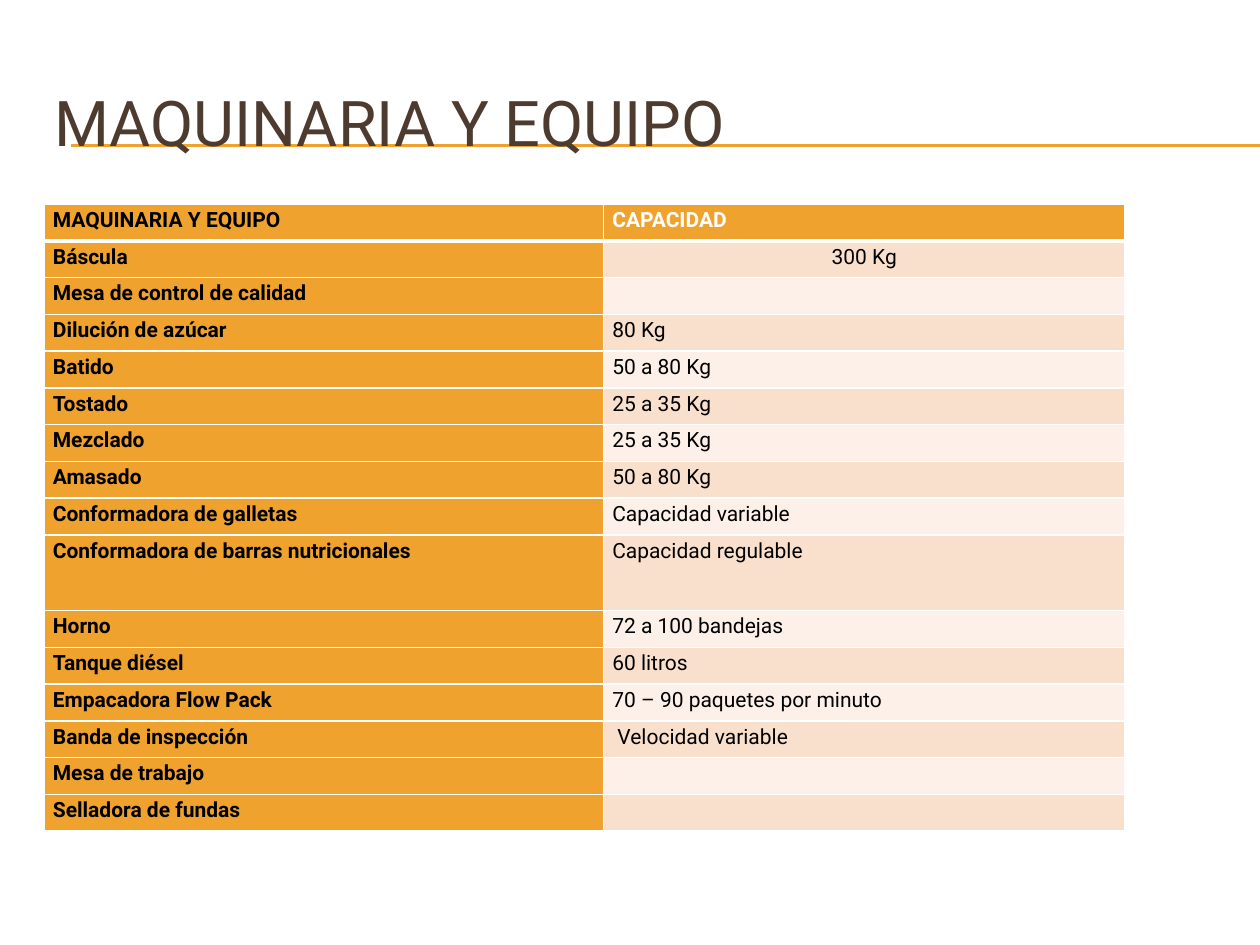
from dataclasses import dataclass

from lxml.etree import SubElement
from pptx import Presentation
from pptx.dml.color import RGBColor
from pptx.enum.shapes import MSO_CONNECTOR
from pptx.enum.text import MSO_ANCHOR, MSO_AUTO_SIZE, PP_ALIGN
from pptx.oxml import parse_xml
from pptx.oxml.ns import nsdecls, qn
from pptx.util import Inches, Pt


@dataclass(frozen=True)
class Theme:
    font: str = "Roboto"
    accent: str = "F0A22E"
    title: str = "4E3B30"
    text: str = "000000"
    white: str = "FFFFFF"
    bands: tuple = ("F9E0CD", "FCF0E8")
    title_size: int = 36
    table_size: int = 12
    rule_width: float = 0.75


@dataclass(frozen=True)
class Box:
    left: float
    top: float
    width: float
    height: float

    def lengths(self):
        return [Inches(n) for n in (self.left, self.top, self.width, self.height)]


THEME = Theme()
PAGE_WIDTH, PAGE_HEIGHT = 10, 7.5
HEADING = "MAQUINARIA Y EQUIPO"
ROWS = [
    (HEADING, "CAPACIDAD"),
    ("Báscula", "300 Kg"),
    ("Mesa de control de calidad", ""),
    ("Dilución de azúcar", "80 Kg"),
    ("Batido", "50 a 80 Kg"),
    ("Tostado", "25 a 35 Kg"),
    ("Mezclado", "25 a 35 Kg"),
    ("Amasado", "50 a 80 Kg"),
    ("Conformadora de galletas", "Capacidad variable"),
    ("Conformadora de barras nutricionales", "Capacidad regulable"),
    ("Horno", "72 a 100 bandejas"),
    ("Tanque diésel", "60 litros"),
    ("Empacadora Flow Pack", "70 – 90 paquetes por minuto"),
    ("Banda de inspección", " Velocidad variable"),
    ("Mesa de trabajo", ""),
    ("Selladora de fundas", ""),
]
CENTERED_ROW = 1
TALL_ROW, TALL_HEIGHT = 9, 0.6
FIRST_COLUMN = 4.44


def rgb(color):
    return RGBColor.from_string(color)


def format_run(span, size, color, bold=False):
    span.font.name = THEME.font
    span.font.size = Pt(size)
    span.font.bold = bold
    span.font.color.rgb = rgb(color)


def add_rules(page, box):
    for index, top in enumerate((box.top, box.top + box.height)):
        rule = page.shapes.add_connector(
            MSO_CONNECTOR.STRAIGHT, Inches(box.left), Inches(top),
            Inches(box.left + box.width), Inches(top))
        rule.line.color.rgb = rgb(THEME.accent)
        rule.line.width = Pt(THEME.rule_width)
        SubElement(rule._element.spPr, qn("a:effectLst"))
        page.shapes._spTree.insert(2 + index, rule._element)


def add_title(page, box):
    title = page.shapes.title
    title.left, title.top, title.width, title.height = box.lengths()
    frame = title.text_frame
    frame.text = HEADING
    frame.auto_size = MSO_AUTO_SIZE.NONE
    frame.vertical_anchor = MSO_ANCHOR.MIDDLE
    para = frame.paragraphs[0]
    para.alignment = PP_ALIGN.LEFT
    format_run(para.runs[0], THEME.title_size, THEME.title)


def set_borders(cell, bottom):
    properties = cell._tc.get_or_add_tcPr()
    widths = {"lnL": 1, "lnR": 1, "lnT": 1, "lnB": bottom}
    for index, (side, width) in enumerate(widths.items()):
        properties.insert(index, parse_xml(
            f'<a:{side} {nsdecls("a")} w="{Pt(width)}"><a:solidFill>'
            f'<a:srgbClr val="{THEME.white}"/></a:solidFill></a:{side}>'))


def fill_cell(cell, text, row, column):
    is_header, is_label = row == 0, column == 0
    strong = is_header or is_label
    cell.margin_left = cell.margin_right = Inches(0.07)
    cell.margin_top = cell.margin_bottom = 0
    cell.fill.solid()
    cell.fill.fore_color.rgb = rgb(THEME.accent if strong else THEME.bands[(row - 1) % 2])
    set_borders(cell, 3 if is_header else 1)
    cell.text_frame.text = text
    para = cell.text_frame.paragraphs[0]
    para.line_spacing = 1.15
    if row == CENTERED_ROW and not is_label:
        para.alignment = PP_ALIGN.CENTER
    color = THEME.white if is_header and not is_label else THEME.text
    for span in para.runs:
        format_run(span, THEME.table_size, color, strong)
    if not text:
        SubElement(para._p, qn("a:endParaRPr"), sz=str(THEME.table_size * 100))


def add_equipment_table(page, box):
    table = page.shapes.add_table(len(ROWS), 2, *box.lengths()).table
    table.columns[0].width = Inches(FIRST_COLUMN)
    table.columns[1].width = Inches(box.width - FIRST_COLUMN)
    row_height = (box.height - TALL_HEIGHT) / (len(ROWS) - 1)
    for row, texts in enumerate(ROWS):
        table.rows[row].height = Inches(TALL_HEIGHT if row == TALL_ROW else row_height)
        for column, text in enumerate(texts):
            fill_cell(table.cell(row, column), text, row, column)


def main():
    deck = Presentation()
    deck.slide_width, deck.slide_height = Inches(PAGE_WIDTH), Inches(PAGE_HEIGHT)
    page = deck.slides.add_slide(deck.slide_layouts[5])
    page.background.fill.solid()
    page.background.fill.fore_color.rgb = rgb(THEME.white)
    add_rules(page, Box(0.56, 1.15, PAGE_WIDTH - 0.56, 0.01))
    add_title(page, Box(0.33, 0.5, 9.5, 0.92))
    add_equipment_table(page, Box(0.35, 1.62, 8.58, 4.98))
    deck.save("out.pptx")


if __name__ == "__main__":
    main()
